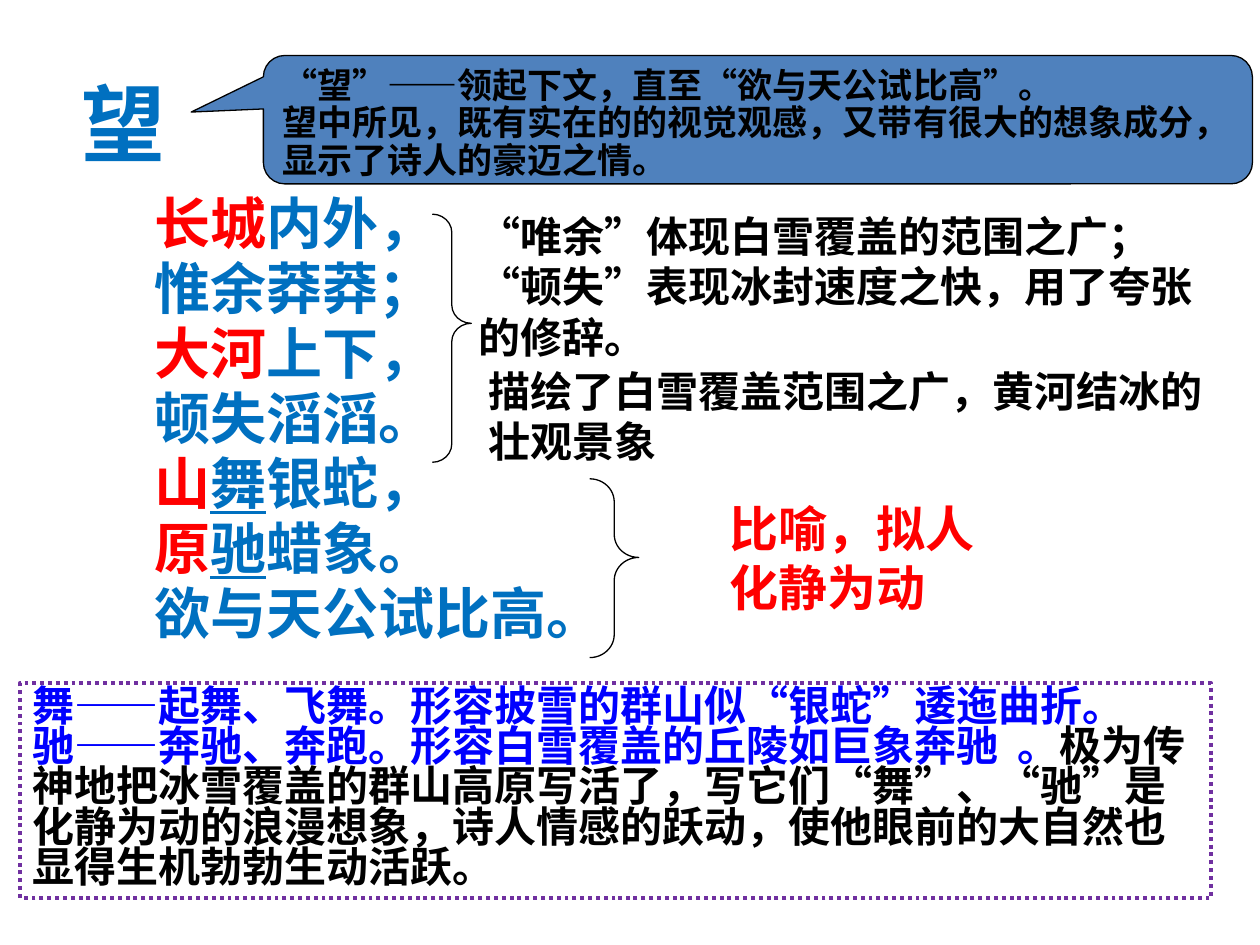
from pptx import Presentation
from pptx.util import Pt
from pptx.dml.color import RGBColor
from pptx.enum.dml import MSO_LINE as Dash
from pptx.enum.shapes import MSO_SHAPE as Kind
from pptx.enum.text import MSO_ANCHOR as Anchor, PP_ALIGN as Align

BLACK = RGBColor(0, 0, 0)
RED = RGBColor(0xFF, 0, 0)
AZURE = RGBColor(0, 0x70, 0xC0)
BLUE = RGBColor(0, 0, 0xFF)
STEEL = RGBColor(0x4F, 0x81, 0xBD)
VIOLET = RGBColor(0x70, 0x30, 0xA0)
SANS, HAN, BODY = "Arial", "Noto Sans CJK SC", "Calibri"


class Deck:
    def __init__(self, wide, high):
        self.prs = Presentation()
        self.prs.slide_width, self.prs.slide_height = Pt(wide), Pt(high)
        self.slide = self.prs.slides.add_slide(self.prs.slide_layouts[5])

    def fill_in(self, frame, paras, size, color=BLACK, font=SANS, gap=1.0,
                before=0, align=Align.LEFT, anchor=Anchor.TOP):
        """Each paragraph is a list of (text, format values) runs."""
        frame.word_wrap = True
        frame.vertical_anchor = anchor
        for i, runs in enumerate(paras):
            para = frame.add_paragraph() if i else frame.paragraphs[0]
            form = dict(alignment=align, line_spacing=gap, space_before=Pt(before))
            for key, val in form.items():
                setattr(para, key, val)
            for text, extra in runs:
                run = para.add_run()
                run.text = text
                look = dict(size=Pt(size), name=font, bold=True, color=color) | extra
                run.font.color.rgb = look.pop("color")
                for key, val in look.items():
                    setattr(run.font, key, val)

    def title(self, box, text, **style):
        head = self.slide.shapes.title
        for key, val in zip(("left", "top", "width", "height"), box):
            setattr(head, key, Pt(val))
        self.fill_in(head.text_frame, [[(text, {})]], align=Align.CENTER,
                     anchor=Anchor.MIDDLE, **style)

    def text(self, box, paras, **style):
        frame = self.slide.shapes.add_textbox(*map(Pt, box)).text_frame
        self.fill_in(frame, paras, **style)

    def shape(self, kind, box, adjust=(), fill=None, line=BLACK, width=0.75, dash=None):
        item = self.slide.shapes.add_shape(kind, *map(Pt, box))
        item.shadow.inherit = False
        for i, val in enumerate(adjust):
            item.adjustments[i] = val
        if fill is None:
            item.fill.background()
        else:
            item.fill.solid()
            item.fill.fore_color.rgb = fill
        item.line.color.rgb = line
        item.line.width = Pt(width)
        if dash:
            item.line.dash_style = dash
        return item.text_frame


def plain(*lines):
    return [[(line, {})] for line in lines]


def main():
    deck = Deck(720, 540)
    red, under = dict(color=RED), dict(underline=True)

    # Title and poem
    deck.title((28, 17.3, 85, 105), "望", size=48, color=AZURE, font=BODY)
    poem = [
        [("长城", red), ("内外，", {})],
        [("惟余莽莽；", {})],
        [("大河", red), ("上下，", {})],
        [("顿失滔滔。", {})],
        [("山", red), ("舞", under), ("银蛇，", {})],
        [("原", red), ("驰", under), ("蜡象。", {})],
        [("欲与天公试比高。", {})],
    ]
    deck.text((81, 111.6, 285, 368.6), poem, size=32, color=AZURE, font=BODY,
              gap=0.8, before=6.4)

    # Callout on the title word
    frame = deck.shape(Kind.ROUNDED_RECTANGULAR_CALLOUT, (150.5, 31.7, 565.2, 73.4),
                       (-0.573, -0.059, 0.167), fill=STEEL)
    deck.fill_in(frame, plain("“望”——领起下文，直至“欲与天公试比高”。",
                              "望中所见，既有实在的的视觉观感，又带有很大的想象成分，显示了诗人的豪迈之情。"),
                 size=20, gap=0.9)

    # Braces beside the poem
    for box in ((247, 122.4, 22.3, 141.8), (337, 273.6, 28, 102.2)):
        deck.shape(Kind.RIGHT_BRACE, box, (0.47, 0.44))

    # Remarks at the braces
    deck.text((266.4, 116.6, 436.3, 94.3),
              plain("“唯余”体现白雪覆盖的范围之广；",
                    "“顿失”表现冰封速度之快，用了夸张的修辞。"), size=24)
    deck.text((272.2, 205.2, 431.3, 65.5),
              plain("描绘了白雪覆盖范围之广，黄河结冰的壮观景象"), size=24)
    deck.text((409.7, 281.5, 156.2, 74.9), plain("比喻，拟人", "化静为动"),
              size=28, color=RED)

    # Word notes in the dotted frame
    frame = deck.shape(Kind.RECTANGLE, (11.5, 390.2, 680.4, 123.1),
                       line=VIOLET, width=2.25, dash=Dash.ROUND_DOT)
    notes = plain("舞——起舞、飞舞。形容披雪的群山似“银蛇”逶迤曲折。",
                  "驰——奔驰、奔跑。形容白雪覆盖的丘陵如巨象奔驰  。")
    notes[1].append(("极为传神地把冰雪覆盖的群山高原写活了，写它们“舞”、“驰”是化静为动的浪漫想象，"
                     "诗人情感的跃动，使他眼前的大自然也显得生机勃勃生动活跃。",
                     dict(color=BLACK, name=SANS)))
    deck.fill_in(frame, notes, size=24, color=BLUE, font=HAN, gap=0.8)

    deck.prs.save("out.pptx")


if __name__ == "__main__":
    main()
